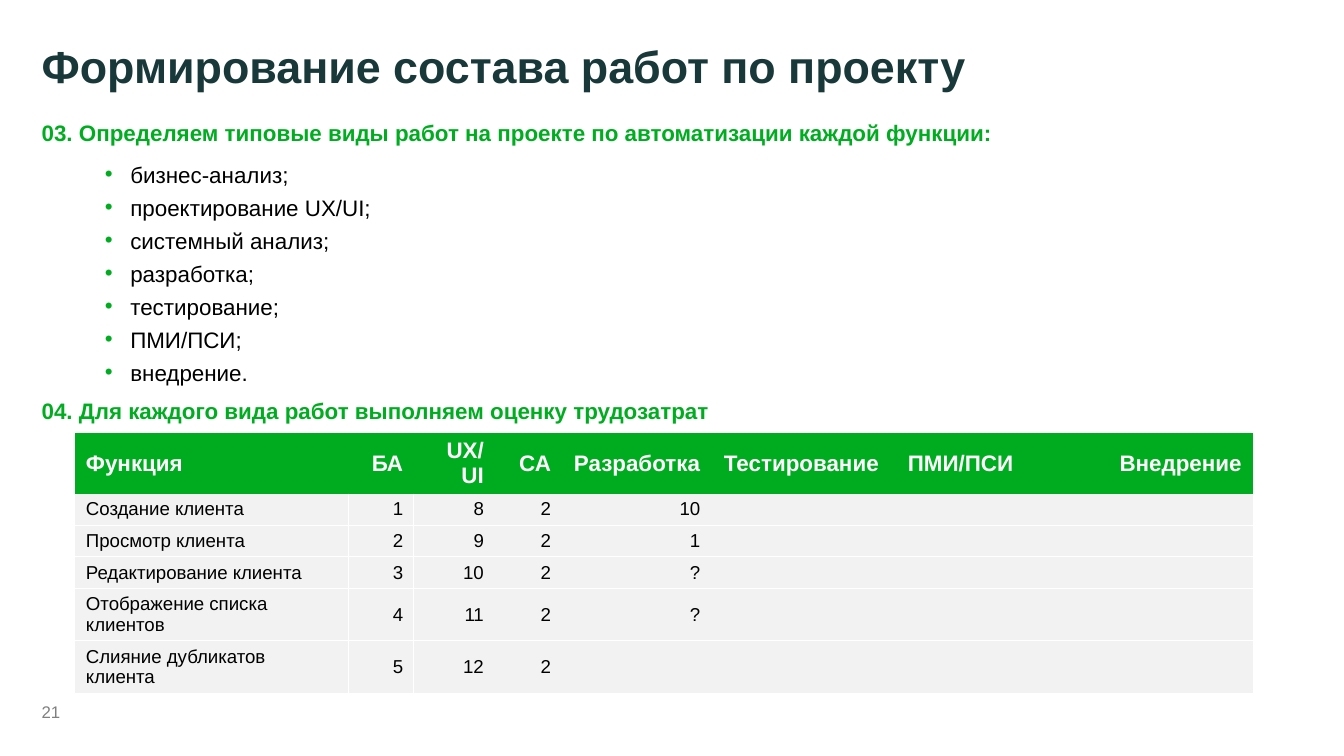
import lxml.etree
import pptx
import pptx.dml.color
import pptx.enum.text
import pptx.oxml.ns
import pptx.util

Inches = pptx.util.Inches
Pt = pptx.util.Pt
qn = pptx.oxml.ns.qn
ANCHOR = pptx.enum.text.MSO_ANCHOR
ALIGN = pptx.enum.text.PP_ALIGN

WORK_TYPES = [
    "бизнес-анализ;", "проектирование UX/UI;", "системный анализ;", "разработка;",
    "тестирование;", "ПМИ/ПСИ;", "внедрение.",
]
COLUMNS = {
    "Функция": 2.03, "БА": 0.49, "UX/UI": 0.6, "СА": 0.5, "Разработка ": 1.11,
    "Тестирование": 1.33, "ПМИ/ПСИ": 1, "Внедрение": 1.7,
}
ESTIMATES = [
    ["Создание клиента", "1", "8", "2", "10"],
    ["Просмотр клиента", "2", "9", "2", "1"],
    ["Редактирование клиента", "3", "10", "2", "?"],
    ["Отображение списка клиентов", "4", "11", "2", "?"],
    ["Слияние дубликатов клиента", "5", "12", "2"],
]
ROW_HEIGHTS = [0.31] + [0.21] * len(ESTIMATES)


def rgb(value):
    return pptx.dml.color.RGBColor.from_string(value)


class Deck:
    """Holds the style and the current slide and adds elements to it."""

    font, green, dark, gray = "Arial", "00AD21", "19383A", "808080"
    header_fill, body_fill, white, black = "00AC1F", "F2F2F2", "FFFFFF", "000000"
    no_grid = "{2D5ABB26-0587-4C30-8999-92F81FD0307C}"
    line_spacing = 1.23

    def __init__(self, width):
        self.prs = pptx.Presentation()
        self.prs.slide_width = Inches(width)
        self.prs.slide_height = Inches(width) * 9 // 16
        self.s = self.prs.slides.add_slide(self.prs.slide_layouts[5])

    def run(self, p, text, size, color, bold=False):
        r = p.add_run()
        r.text = text
        r.font.name, r.font.size, r.font.bold = self.font, Pt(size), bold
        r.font.color.rgb = rgb(color)

    def frame(self, sp, anchor=ANCHOR.TOP, wrap=True):
        tf = sp.text_frame
        tf.margin_left = tf.margin_right = tf.margin_top = tf.margin_bottom = 0
        tf.vertical_anchor, tf.word_wrap = anchor, wrap
        tf.auto_size = pptx.enum.text.MSO_AUTO_SIZE.NONE
        return tf

    def box(self, left, top, width, height, **options):
        sp = self.s.shapes.add_textbox(Inches(left), Inches(top), Inches(width), Inches(height))
        return self.frame(sp, **options)

    def title(self, text, left, top, width, height):
        sp = self.s.shapes.title
        sp.left, sp.top, sp.width, sp.height = map(Inches, (left, top, width, height))
        p = self.frame(sp).paragraphs[0]
        p.alignment = ALIGN.LEFT
        self.run(p, text, 24, self.dark, True)

    def heading(self, text, left, top, width):
        p = self.box(left, top, width, 0.25).paragraphs[0]
        p.line_spacing = self.line_spacing
        self.run(p, text, 12, self.green, True)

    def bullets(self, items, left, top, width, height):
        tf = self.box(left, top, width, height)
        for i, text in enumerate(items):
            p = tf.add_paragraph() if i else tf.paragraphs[0]
            p.line_spacing = self.line_spacing
            pPr = p._p.get_or_add_pPr()
            pPr.set("marL", str(Inches(0.19)))
            pPr.set("indent", str(-Inches(0.19)))
            color = lxml.etree.SubElement(pPr, qn("a:buClr"))
            lxml.etree.SubElement(color, qn("a:srgbClr"), val=self.green)
            lxml.etree.SubElement(pPr, qn("a:buFont"), typeface=self.font)
            lxml.etree.SubElement(pPr, qn("a:buChar"), char="•")
            self.run(p, text, 12, self.black)

    def page_number(self, text, left, top, width, height):
        tf = self.box(left, top, width, height, anchor=ANCHOR.BOTTOM, wrap=False)
        self.run(tf.paragraphs[0], text, 9, self.gray)

    def borders(self, cell, visible):
        tcPr = cell._tc.get_or_add_tcPr()
        for side in "LRTB":
            ln = lxml.etree.SubElement(tcPr, qn(f"a:ln{side}"), w=str(Pt(0.5)))
            if side in visible:
                fill = lxml.etree.SubElement(ln, qn("a:solidFill"))
                lxml.etree.SubElement(fill, qn("a:srgbClr"), val=self.white)
            else:
                lxml.etree.SubElement(ln, qn("a:noFill"))

    def cell(self, cell, text, row, column):
        header = row == 0
        cell.margin_left = cell.margin_right = Inches(0.08)
        cell.margin_top = cell.margin_bottom = Inches(0.04)
        cell.vertical_anchor = ANCHOR.MIDDLE
        left = "L" if column in (1, 2) else ""
        right = "R" if column in (0, 1) else ""
        top = "T" if row > 1 else ""
        self.borders(cell, "" if header else left + right + top + "B")
        cell.fill.solid()
        cell.fill.fore_color.rgb = rgb(self.header_fill if header else self.body_fill)
        p = cell.text_frame.paragraphs[0]
        p.alignment = ALIGN.RIGHT if column else ALIGN.LEFT
        if header:
            self.run(p, text, 12, self.white, True)
        elif text:
            self.run(p, text, 10, self.black)
        else:
            end = lxml.etree.SubElement(p._p, qn("a:endParaRPr"), sz="1000")
            lxml.etree.SubElement(end, qn("a:latin"), typeface=self.font)

    def table(self, columns, rows, heights, left, top):
        shape = self.s.shapes.add_table(
            len(heights), len(columns), Inches(left), Inches(top),
            Inches(sum(columns.values())), Inches(sum(heights)))
        table = shape.table
        table.first_row = table.horz_banding = False
        table._tbl.tblPr.find(qn("a:tableStyleId")).text = self.no_grid
        for column, width in zip(table.columns, columns.values()):
            column.width = Inches(width)
        for i, (values, height) in enumerate(zip([list(columns)] + rows, heights)):
            table.rows[i].height = Inches(height)
            for j in range(len(columns)):
                text = values[j] if j < len(values) else ""
                self.cell(table.cell(i, j), text, i, j)


def main():
    deck = Deck(10)
    deck.page_number("21", 0.31, 5.02, 0.31, 0.35)
    deck.bullets(WORK_TYPES, 0.78, 1.15, 5.6, 1.74)
    deck.heading("03. Определяем типовые виды работ на проекте по автоматизации каждой функции:",
                 0.31, 0.84, 9.08)
    deck.title("Формирование состава работ по проекту", 0.31, 0.29, 9.37, 0.71)
    deck.heading("04. Для каждого вида работ выполняем оценку трудозатрат", 0.31, 2.91, 5.6)
    deck.table(COLUMNS, ESTIMATES, ROW_HEIGHTS, 0.56, 3.22)
    deck.prs.save("out.pptx")


if __name__ == "__main__":
    main()
